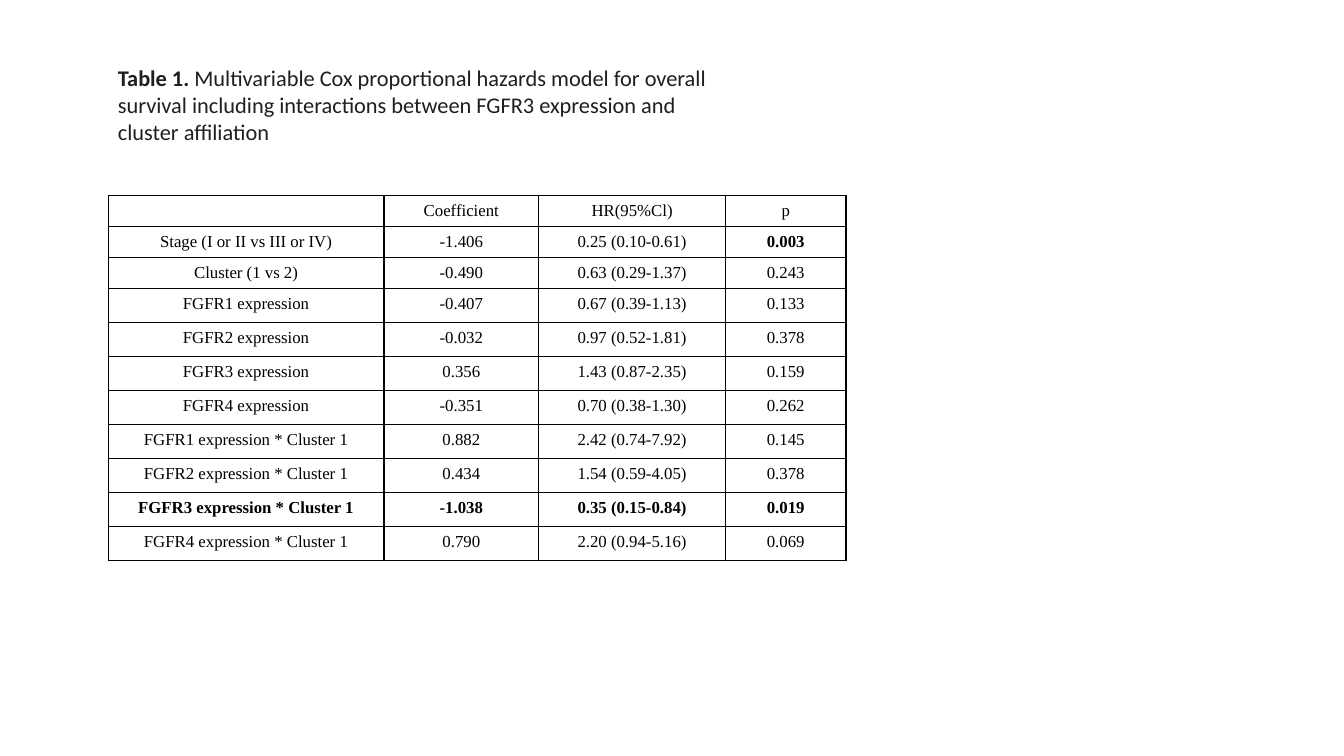
from lxml.etree import SubElement
from pptx import Presentation
from pptx.dml.color import RGBColor
from pptx.enum.text import MSO_ANCHOR as Anchor, MSO_AUTO_SIZE as AutoSize, PP_ALIGN as Align
from pptx.oxml.ns import qn
from pptx.util import Pt

BLACK = RGBColor(0x00, 0x00, 0x00)
INK = RGBColor(0x1F, 0x1F, 0x1F)

CAPTION_LABEL = "Table 1."
CAPTION_TEXT = (
    " Multivariable Cox proportional hazards model for overall survival "
    "including interactions between FGFR3 expression and cluster affiliation"
)
COX_ROWS = [
    ("", "Coefficient", "HR(95%Cl)", "p"),
    ("Stage (I or II vs III or IV)", "-1.406", "0.25 (0.10-0.61)", "0.003"),
    ("Cluster (1 vs 2)", "-0.490", "0.63 (0.29-1.37)", "0.243"),
    ("FGFR1 expression", "-0.407", "0.67 (0.39-1.13)", "0.133"),
    ("FGFR2 expression", "-0.032", "0.97 (0.52-1.81)", "0.378"),
    ("FGFR3 expression", "0.356", "1.43 (0.87-2.35)", "0.159"),
    ("FGFR4 expression", "-0.351", "0.70 (0.38-1.30)", "0.262"),
    ("FGFR1 expression * Cluster 1", "0.882", "2.42 (0.74-7.92)", "0.145"),
    ("FGFR2 expression * Cluster 1", "0.434", "1.54 (0.59-4.05)", "0.378"),
    ("FGFR3 expression * Cluster 1", "-1.038", "0.35 (0.15-0.84)", "0.019"),
    ("FGFR4 expression * Cluster 1", "0.790", "2.20 (0.94-5.16)", "0.069"),
]
COLUMN_WIDTHS = [197, 110.5, 133.5, 86]
ROW_HEIGHTS = [22.2] * 3 + [24.3] * 8
SIGNIFICANT_CELLS = {(1, 3)} | {(9, column) for column in range(4)}


def add_caption(slide, left, top, width, height):
    """Place the table caption in the title placeholder."""
    title = slide.shapes.title
    title.left, title.top, title.width, title.height = map(Pt, (left, top, width, height))
    frame = title.text_frame
    frame.word_wrap = True
    frame.auto_size = AutoSize.NONE
    frame.vertical_anchor = Anchor.TOP
    paragraph = frame.paragraphs[0]
    paragraph.alignment = Align.LEFT
    for text, bold in ((CAPTION_LABEL, True), (CAPTION_TEXT, False)):
        run = paragraph.add_run()
        run.text = text
        run.font.name = "Calibri"
        run.font.size = Pt(16)
        run.font.bold = bold
        run.font.color.rgb = INK


def set_borders(cell):
    """Draw a thin black line on every side of a cell."""
    properties = cell._tc.get_or_add_tcPr()
    for side in ("a:lnL", "a:lnR", "a:lnT", "a:lnB"):
        line = SubElement(properties, qn(side), w=str(Pt(1)))
        fill = SubElement(line, qn("a:solidFill"))
        SubElement(fill, qn("a:srgbClr"), val=str(BLACK))


def fill_cell(cell, text, bold):
    """Write centred text in a bordered cell without fill."""
    set_borders(cell)
    cell.fill.background()
    cell.text = text
    paragraph = cell.text_frame.paragraphs[0]
    paragraph.alignment = Align.CENTER
    paragraph.line_spacing = 1.07
    paragraph.font.name = "Times New Roman"
    paragraph.font.size = Pt(12)
    paragraph.font.bold = bold
    paragraph.font.color.rgb = BLACK


def add_cox_table(slide, left, top):
    """Build the table of model coefficients from its top left corner."""
    frame = slide.shapes.add_table(
        len(COX_ROWS), len(COLUMN_WIDTHS), Pt(left), Pt(top),
        Pt(sum(COLUMN_WIDTHS)), Pt(sum(ROW_HEIGHTS)),
    )
    table = frame.table
    table.first_row = table.horz_banding = False
    for column, width in zip(table.columns, COLUMN_WIDTHS):
        column.width = Pt(width)
    for row, height in zip(table.rows, ROW_HEIGHTS):
        row.height = Pt(height)
    for row_index, texts in enumerate(COX_ROWS):
        for column_index, text in enumerate(texts):
            bold = (row_index, column_index) in SIGNIFICANT_CELLS
            fill_cell(table.cell(row_index, column_index), text, bold)


def main():
    """Create the presentation with its one table slide."""
    presentation = Presentation()
    presentation.slide_width, presentation.slide_height = Pt(960), Pt(540)
    slide = presentation.slides.add_slide(presentation.slide_layouts[5])
    add_caption(slide, 77, 42.5, 453.6, 65.5)
    add_cox_table(slide, 77.3, 139.5)
    presentation.save("out.pptx")


if __name__ == "__main__":
    main()
